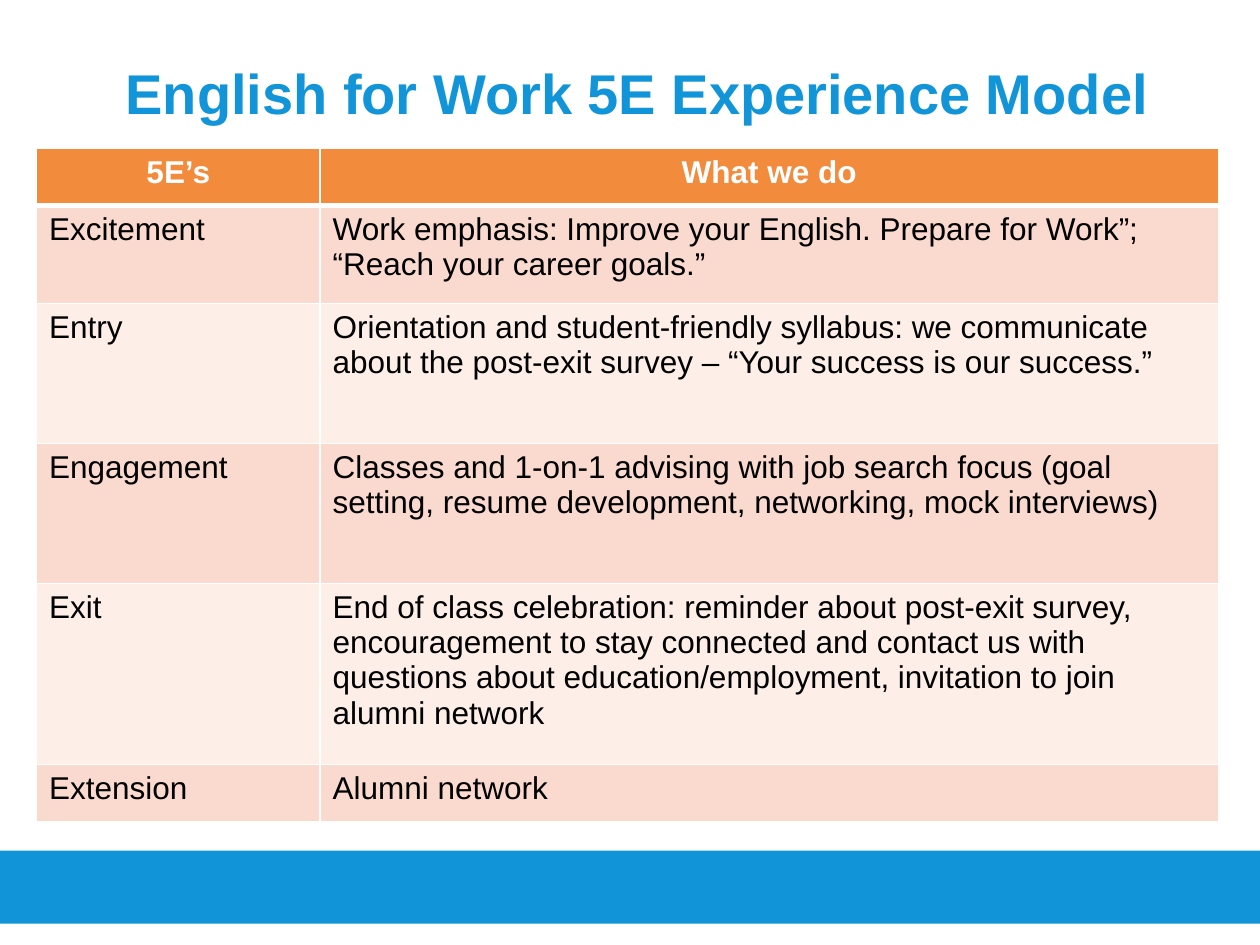
from lxml import etree
from pptx import Presentation
from pptx.dml.color import RGBColor
from pptx.enum import shapes, text
from pptx.oxml import ns
from pptx.util import Inches, Pt

BLUE, ORANGE, WHITE, BLACK = "1295D8", "F38B3C", "FFFFFF", "000000"
BANDS = ["FADACE", "FDEEE8"]


def rgb(value):
    return RGBColor.from_string(value)


def add_run(p, words, size, color, bold):
    r = p.add_run()
    r.text = words
    r.font.name = "Arial"
    r.font.size = Pt(size)
    r.font.bold = bold
    r.font.color.rgb = rgb(color)


prs = Presentation()
prs.slide_width, prs.slide_height = Inches(10), Inches(7.5)
s = prs.slides.add_slide(prs.slide_layouts[6])

# Footer band
sp = s.shapes.add_shape(shapes.MSO_SHAPE.RECTANGLE,
                        Inches(-0.19), Inches(6.75), Inches(10.27), Inches(0.58))
sp.shadow.inherit = False
sp.fill.solid()
sp.fill.fore_color.rgb = rgb(BLUE)
sp.line.fill.background()

# Title
tf = s.shapes.add_textbox(Inches(0.56), Inches(0.31), Inches(9), Inches(0.84)).text_frame
tf.word_wrap = True
tf.vertical_anchor = text.MSO_ANCHOR.MIDDLE
p = tf.paragraphs[0]
p.alignment = text.PP_ALIGN.CENTER
add_run(p, "English for Work 5E Experience Model", 32, BLUE, True)

# Table content, with the height of each row
rows = [
    (0.45, "5E’s", "What we do"),
    (0.78, "Excitement",
     "Work emphasis: Improve your English. Prepare for Work”; “Reach your career goals.”"),
    (1.11, "Entry",
     "Orientation and student-friendly syllabus: we communicate about the post-exit "
     "survey – “Your success is our success.”"),
    (1.11, "Engagement",
     "Classes and 1-on-1 advising with job search focus (goal setting, resume "
     "development, networking, mock interviews)"),
    (1.44, "Exit",
     "End of class celebration: reminder about post-exit survey, encouragement to stay "
     "connected and contact us with questions about education/employment, invitation to "
     "join alumni network"),
    (0.45, "Extension", "Alumni network"),
]
table = s.shapes.add_table(len(rows), 2, Inches(0.29), Inches(1.18),
                           Inches(9.38), Inches(5.33)).table
for column, width in zip(table.columns, [2.25, 7.13]):
    column.width = Inches(width)

for i, (height, *words) in enumerate(rows):
    table.rows[i].height = Inches(height)
    header = i == 0
    for j, content in enumerate(words):
        cell = table.cell(i, j)
        p = cell.text_frame.paragraphs[0]
        if header:
            p.alignment = text.PP_ALIGN.CENTER
        add_run(p, content, 18, WHITE if header else BLACK, header)

        # White borders, thicker between the header and the body
        tcPr = cell._tc.get_or_add_tcPr()
        for side in ["L", "R", "T", "B"]:
            thick = (i, side) in [(0, "B"), (1, "T")]
            ln = etree.SubElement(tcPr, ns.qn(f"a:ln{side}"), w=str(Pt(3 if thick else 1)))
            fill = etree.SubElement(ln, ns.qn("a:solidFill"))
            etree.SubElement(fill, ns.qn("a:srgbClr"), val=WHITE)
        cell.fill.solid()
        cell.fill.fore_color.rgb = rgb(ORANGE if header else BANDS[(i - 1) % 2])

prs.save("out.pptx")
